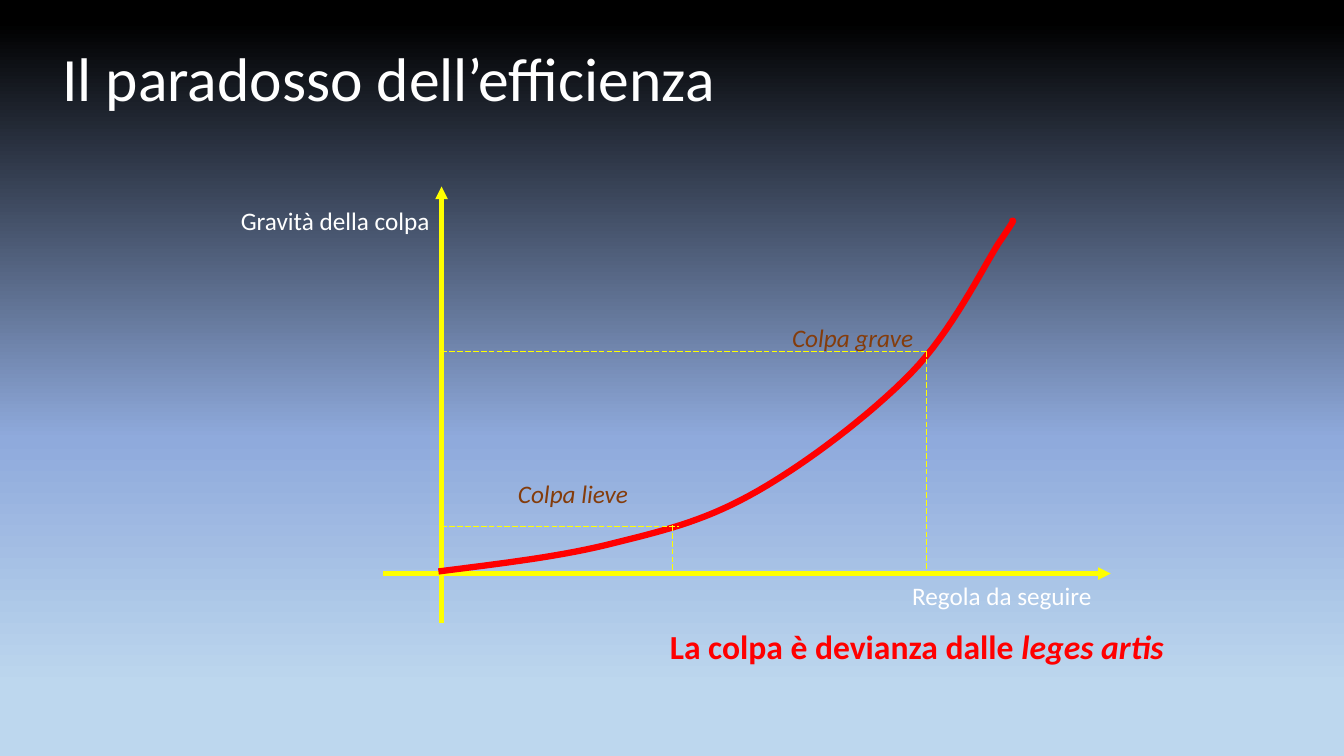
from copy import deepcopy

from pptx import Presentation
from pptx.dml.color import RGBColor
from pptx.enum.dml import MSO_LINE_DASH_STYLE as DASH
from pptx.enum.shapes import MSO_CONNECTOR as CONNECTOR
from pptx.enum.text import MSO_ANCHOR as ANCHOR, MSO_AUTO_SIZE as AUTO_SIZE, PP_ALIGN as ALIGN
from pptx.oxml.ns import qn
from pptx.util import Pt
from lxml.etree import SubElement

WHITE = RGBColor(0xFF, 0xFF, 0xFF)
BLACK = RGBColor(0x00, 0x00, 0x00)
RED = RGBColor(0xFF, 0x00, 0x00)
YELLOW = RGBColor(0xFF, 0xFF, 0x00)
BROWN = RGBColor(0x84, 0x3C, 0x0B)
PERIWINKLE = RGBColor(0x8F, 0xAA, 0xDC)
PALE_BLUE = RGBColor(0xBD, 0xD7, 0xEE)

AXIS_X, AXIS_Y = 315.4, 409.7
FAULT_CURVE = [
    (313.2, 408.2),
    (357.8, 402.5), (402.5, 397.4), (440.6, 387.4),
    (478.8, 378), (506.2, 370.8), (541.4, 350.6),
    (576.7, 330.5), (622.1, 295.9), (650.9, 266.4),
    (679.7, 236.9), (702, 191.5), (713.5, 173.5),
    (725.8, 155.5), (724.3, 157), (722.2, 158.4),
]


def bezier_points(knots, steps=16):
    """Sample a chain of cubic Bézier segments, first point included."""
    points = [knots[0]]
    for first in range(0, len(knots) - 1, 3):
        segment = knots[first:first + 4]
        for step in range(1, steps + 1):
            t = step / steps
            weights = ((1 - t) ** 3, 3 * t * (1 - t) ** 2, 3 * t * t * (1 - t), t ** 3)
            points.append(tuple(sum(w * p[axis] for w, p in zip(weights, segment))
                                for axis in (0, 1)))
    return points


class SlideWriter:
    font_name = "Calibri"

    def __init__(self, slide):
        self.slide = slide

    def background(self, stops):
        fill = self.slide.background.fill
        fill.gradient()
        fill.gradient_angle = 270
        stop_list = self.slide.element.find(".//" + qn("a:gsLst"))
        while len(stop_list) < len(stops):
            stop_list.append(deepcopy(stop_list[-1]))
        for stop, (position, color) in zip(fill.gradient_stops, stops):
            stop.position = position
            stop.color.rgb = color

    def text(self, box, runs, size, color, frame_format=None, paragraph_format=None):
        """Write runs given as (words, font format) pairs in one paragraph."""
        frame = self.slide.shapes.add_textbox(*map(Pt, box)).text_frame
        frame_values = {"word_wrap": True, "auto_size": AUTO_SIZE.SHAPE_TO_FIT_TEXT}
        for name, value in (frame_values | (frame_format or {})).items():
            setattr(frame, name, value)
        paragraph = frame.paragraphs[0]
        for name, value in (paragraph_format or {}).items():
            setattr(paragraph, name, value)
        for words, font_format in runs:
            run = paragraph.add_run()
            run.text = words
            run.font.color.rgb = color
            font_values = {"name": self.font_name, "size": Pt(size)} | font_format
            for name, value in font_values.items():
                setattr(run.font, name, value)

    def line(self, start, end, width, color=YELLOW, dash=None, arrow=False):
        connector = self.slide.shapes.add_connector(
            CONNECTOR.STRAIGHT, *map(Pt, start + end))
        stroke = connector.line
        stroke.color.rgb = color
        for name, value in {"width": Pt(width), "dash_style": dash}.items():
            setattr(stroke, name, value)
        properties = connector.element.spPr
        if arrow:
            SubElement(properties.find(qn("a:ln")), qn("a:tailEnd"), type="triangle")
        SubElement(properties, qn("a:effectLst"))

    def curve(self, knots, width, color):
        start, *rest = [(Pt(x), Pt(y)) for x, y in bezier_points(knots)]
        builder = self.slide.shapes.build_freeform(*start)
        builder.add_line_segments(rest, close=False)
        shape = builder.convert_to_shape()
        shape.shadow.inherit = False
        shape.fill.background()
        shape.line.color.rgb = color
        shape.line.width = Pt(width)


def main():
    deck = Presentation()
    deck.slide_width, deck.slide_height = Pt(960), Pt(540)
    writer = SlideWriter(deck.slides.add_slide(deck.slide_layouts[6]))
    writer.background([(0.03, BLACK), (0.58, PERIWINKLE), (0.91, PALE_BLUE)])

    writer.text((466.6, 445.7, 376.6, 35.3),
                [("La colpa è devianza dalle ", {"bold": True}),
                 ("leges artis", {"bold": True, "italic": True})], 24, RED,
                {"vertical_anchor": ANCHOR.MIDDLE, "auto_size": AUTO_SIZE.NONE},
                {"alignment": ALIGN.CENTER, "line_spacing": 0.9})

    writer.line((AXIS_X, 445), (AXIS_X, 133.2), 3, arrow=True)
    writer.line((273.6, AXIS_Y), (793.4, AXIS_Y), 3, arrow=True)
    writer.text((644.4, 411.1, 275, 28.8), [("Regola da seguire", {})], 18, WHITE)
    writer.text((164.9, 143.3, 159.8, 28.8), [("Gravità della colpa", {})], 18, WHITE)

    writer.curve(FAULT_CURVE, 4.5, RED)
    for rule_x, fault_y, overrun in ((480.2, 375.8, 5.1), (661.7, 251.3, 0.7)):
        writer.line((AXIS_X, fault_y), (rule_x + overrun, fault_y), 0.5, dash=DASH.LONG_DASH)
        writer.line((rule_x, fault_y - 0.7), (rule_x, AXIS_Y), 0.5, dash=DASH.LONG_DASH)

    for fault, left, top in (("Colpa lieve", 362.9, 338.4), ("Colpa grave", 558.7, 226.8)):
        writer.text((left, top, 120.2, 28.8), [(fault, {"italic": True})], 18, BROWN)
    writer.text((37.4, 25.2, 547.9, 60.5), [("Il paradosso dell’efficienza", {})], 44, WHITE)

    deck.save("out.pptx")


if __name__ == "__main__":
    main()
